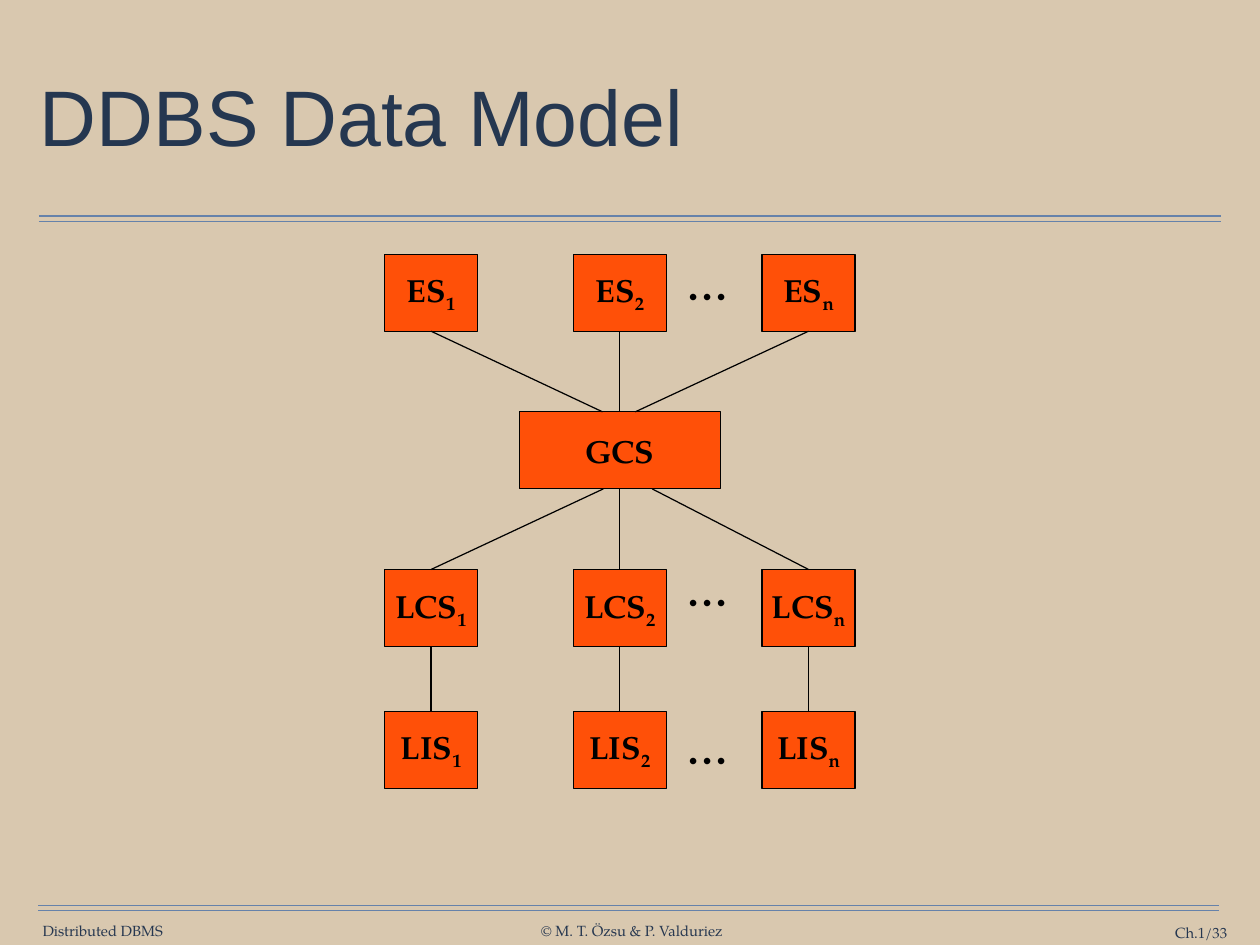
import lxml.etree
import pptx
import pptx.util
import pptx.dml.color
import pptx.enum.shapes
import pptx.enum.text
import pptx.oxml.ns

Inches = pptx.util.Inches
Pt = pptx.util.Pt
RGBColor = pptx.dml.color.RGBColor
ALIGN = pptx.enum.text.PP_ALIGN
ANCHOR = pptx.enum.text.MSO_ANCHOR

SAND = RGBColor(0xD9, 0xC8, 0xAF)
RULE_BLUE = RGBColor(0x66, 0x82, 0xAA)
FOOTER_NAVY = RGBColor(0x26, 0x37, 0x50)
TITLE_NAVY = RGBColor(0x25, 0x37, 0x50)
ORANGE = RGBColor(0xFF, 0x50, 0x08)
BLACK = RGBColor(0, 0, 0)
SERIF = "TeX Gyre Pagella"

prs = pptx.Presentation()
prs.slide_width = Inches(14.22)
prs.slide_height = Inches(10.67)
s = prs.slides.add_slide(prs.slide_layouts[5])
s.background.fill.solid()
s.background.fill.fore_color.rgb = SAND


def add_line(x1, y1, x2, y2, color):
    line = s.shapes.add_connector(
        pptx.enum.shapes.MSO_CONNECTOR.STRAIGHT,
        Inches(x1), Inches(y1), Inches(x2), Inches(y2))
    line.line.color.rgb = color
    line.line.width = Pt(1)
    lxml.etree.SubElement(line._element.spPr, pptx.oxml.ns.qn("a:effectLst"))
    return line


def set_text(sp, text, size, color, align, wrap=False, bold=False, subscript=""):
    tf = sp.text_frame
    tf.word_wrap = wrap
    tf.vertical_anchor = ANCHOR.MIDDLE
    tf.margin_left = tf.margin_right = tf.margin_top = tf.margin_bottom = 0
    p = tf.paragraphs[0]
    p.alignment = align
    p.font.name = SERIF
    p.font.size = Pt(size)
    p.font.bold = bold
    p.font.color.rgb = color
    p.add_run().text = text
    if subscript:
        r = p.add_run()
        r.text = subscript
        r._r.get_or_add_rPr().set("baseline", "-25000")


for left, right, top in [(0.44, 13.78, 2.44), (0.43, 13.76, 10.22)]:
    for y in (top, top + 0.06):
        add_line(left, y, right, y, RULE_BLUE)

footers = [
    ("Distributed DBMS", 0.47, 10.41, 1.38, ALIGN.CENTER),
    ("© M. T. Özsu & P. Valduriez", 6.09, 10.41, 2.08, ALIGN.CENTER),
    ("Ch.1/33", 12.31, 10.43, 1.54, ALIGN.RIGHT),
]
for text, x, y, width, align in footers:
    sp = s.shapes.add_textbox(Inches(x), Inches(y), Inches(width), Inches(0.2))
    set_text(sp, text, 12, FOOTER_NAVY, align, wrap=align == ALIGN.RIGHT)

title = s.shapes.title
title.left, title.top = Inches(0.39), Inches(0.49)
title.width, title.height = Inches(13.44), Inches(1.76)
tf = title.text_frame
tf.text = "DDBS Data Model"
tf.auto_size = pptx.enum.text.MSO_AUTO_SIZE.NONE
tf.vertical_anchor = ANCHOR.MIDDLE
tf.margin_left = tf.margin_right = tf.margin_top = tf.margin_bottom = Inches(0.06)
p = tf.paragraphs[0]
p.alignment = ALIGN.LEFT
p.line_spacing = 0.9
p.font.name = "Arial"
p.font.size = Pt(64)
p.font.color.rgb = TITLE_NAVY

boxes = [("GCS", "", 5.86, 4.65, 2.27)]
for name, y in [("ES", 2.87), ("LCS", 6.43), ("LIS", 8.03)]:
    for column, index in enumerate("12n"):
        boxes.append((name, index, 4.34 + column * 2.13, y, 1.05))

schemas = {}
for name, index, x, y, width in boxes:
    sp = s.shapes.add_shape(
        pptx.enum.shapes.MSO_SHAPE.RECTANGLE,
        Inches(x), Inches(y), Inches(width), Inches(0.87))
    sp.shadow.inherit = False
    sp.fill.solid()
    sp.fill.fore_color.rgb = ORANGE
    sp.line.color.rgb = BLACK
    sp.line.width = Pt(1)
    set_text(sp, name, 26, BLACK, ALIGN.CENTER, bold=True, subscript=index)
    schemas[name + index] = sp

for y in (2.68, 6.14, 7.92):
    sp = s.shapes.add_textbox(Inches(7.6), Inches(y), Inches(0.77), Inches(0.91))
    set_text(sp, "...", 46, BLACK, ALIGN.CENTER)

for index, gcs_top, gcs_bottom in [("1", 6.8, 6.81), ("2", 7, 7), ("n", 7.17, 7.36)]:
    upper = add_line(gcs_top, 3.74, gcs_top, 4.65, BLACK)
    upper.begin_connect(schemas["ES" + index], 2)
    lower = add_line(gcs_bottom, 5.52, gcs_bottom, 6.43, BLACK)
    lower.end_connect(schemas["LCS" + index], 0)
    if index == "2":
        upper.end_connect(schemas["GCS"], 0)
        lower.begin_connect(schemas["GCS"], 2)
    local = add_line(7, 7.3, 7, 8.03, BLACK)
    local.begin_connect(schemas["LCS" + index], 2)
    local.end_connect(schemas["LIS" + index], 0)

prs.save("out.pptx")
